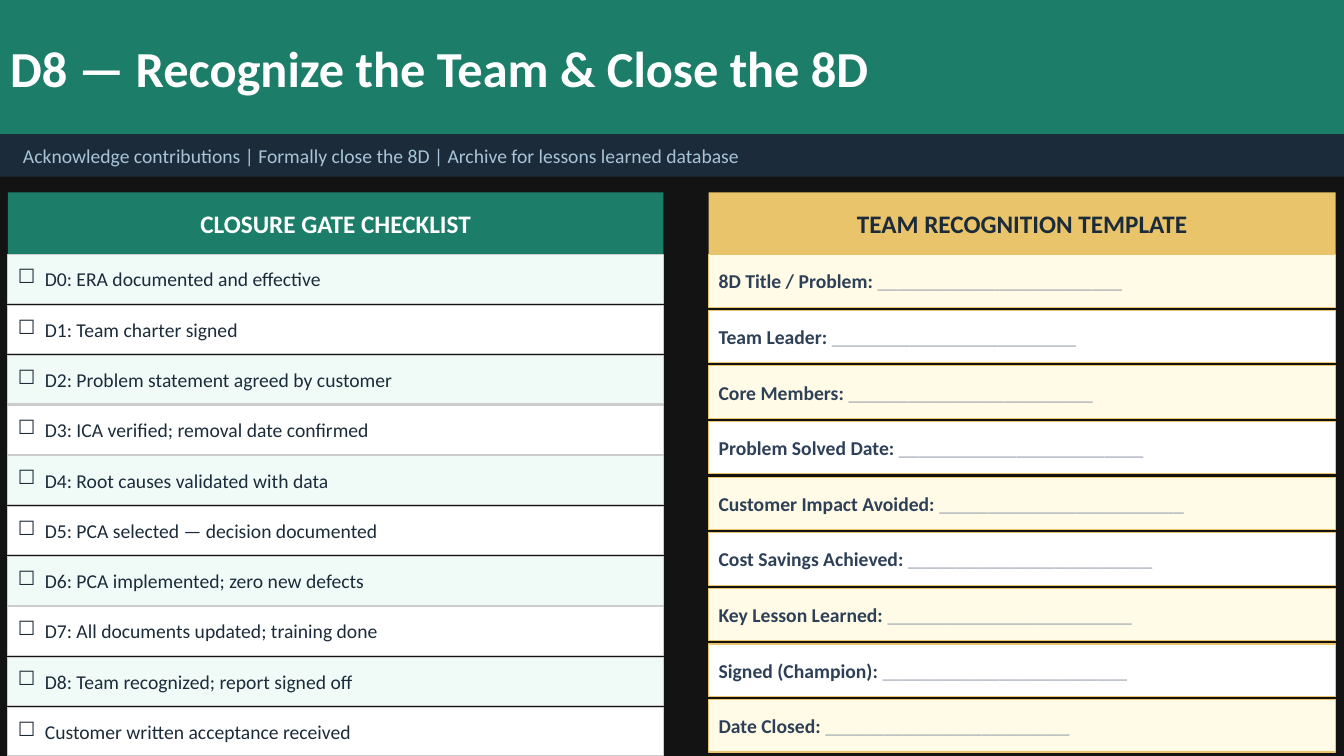
from lxml.etree import SubElement
from pptx import Presentation
from pptx.dml.color import RGBColor
from pptx.enum.shapes import MSO_SHAPE as Shape
from pptx.enum.text import MSO_ANCHOR as Anchor, MSO_AUTO_SIZE as AutoSize, PP_ALIGN as Align
from pptx.oxml.ns import qn
from pptx.util import Cm, Pt

COLORS = {
    "page": "131313", "green": "1C7D68", "navy": "1C2B3A", "mist": "A8C4D8",
    "white": "FFFFFF", "mint": "F0FBF8", "gray": "CCCCCC", "gold": "E9C46A",
    "cream": "FFFBE6", "slate": "2E4057", "blank": "9CA3AF",
}
FONT = "Calibri"
PAGE_WIDTH, PAGE_HEIGHT = 33.87, 19.05
HEADER_HEIGHT = 1.57
BLANK_LINE = "_" * 25

CHECKLIST = [
    "D0: ERA documented and effective",
    "D1: Team charter signed",
    "D2: Problem statement agreed by customer",
    "D3: ICA verified; removal date confirmed",
    "D4: Root causes validated with data",
    "D5: PCA selected — decision documented",
    "D6: PCA implemented; zero new defects",
    "D7: All documents updated; training done",
    "D8: Team recognized; report signed off",
    "Customer written acceptance received",
]
FIELDS = [
    "8D Title / Problem", "Team Leader", "Core Members", "Problem Solved Date",
    "Customer Impact Avoided", "Cost Savings Achieved", "Key Lesson Learned",
    "Signed (Champion)", "Date Closed",
]


def color(name):
    return RGBColor.from_string(COLORS[name])


def style_run(span, size, tint, bold=False):
    span.font.name = FONT
    span.font.size = Pt(size)
    span.font.bold = bold
    span.font.color.rgb = color(tint)


def style_box(shape, fill, line=None):
    shape.fill.solid()
    shape.fill.fore_color.rgb = color(fill)
    if line:
        shape.line.color.rgb = color(line)
        shape.line.width = Pt(0.75)
    else:
        shape.line.fill.background()
    frame = shape.text_frame
    frame.word_wrap = True
    frame.auto_size = AutoSize.NONE
    frame.vertical_anchor = Anchor.MIDDLE


def add_box(page, box, text, fill, size, tint, bold=False, line=None, align=Align.LEFT):
    """Add a filled rectangle with one line of text; box is left, top, width, height in cm."""
    shape = page.shapes.add_shape(Shape.RECTANGLE, *map(Cm, box))
    shape.shadow.inherit = False
    style_box(shape, fill, line)
    shape.text_frame.text = text
    para = shape.text_frame.paragraphs[0]
    para.alignment = align
    style_run(para.runs[0], size, tint, bold)
    return shape


def add_heading(page, box):
    left, top, width, height = box
    title_height = 3.38

    # Title bar
    title = page.shapes.title
    title.left, title.top = Cm(left), Cm(top)
    title.width, title.height = Cm(width), Cm(title_height)
    style_box(title, "green")
    title.text_frame.text = "D8 — Recognize the Team & Close the 8D"
    para = title.text_frame.paragraphs[0]
    para.alignment = Align.LEFT
    style_run(para.runs[0], 36, "white", bold=True)

    # Subtitle strip
    strip = add_box(page, (left, top + title_height, width, height - title_height),
                    "Acknowledge contributions | Formally close the 8D | "
                    "Archive for lessons learned database", "navy", 14, "mist")
    strip.text_frame.margin_left = Cm(0.58)


def row_boxes(box, count, gap):
    """Split the space below the panel header into equal rows."""
    left, top, width, height = box
    pitch = (height - HEADER_HEIGHT + gap) / count
    for index in range(count):
        yield left, top + HEADER_HEIGHT + index * pitch, width, pitch - gap


def add_header(page, box, text, fill, tint):
    left, top, width, _ = box
    add_box(page, (left, top, width, HEADER_HEIGHT), text, fill, 18, tint,
            bold=True, align=Align.CENTER)


def add_checkbox(para):
    properties = para._p.get_or_add_pPr()
    properties.set("marL", str(Cm(0.68)))
    properties.set("indent", str(Cm(-0.68)))
    SubElement(properties, qn("a:buChar")).set("char", "☐")


def add_checklist(page, box):
    add_header(page, box, "CLOSURE GATE CHECKLIST", "green", "white")
    for index, row in enumerate(row_boxes(box, len(CHECKLIST), gap=0.04)):
        fill = "white" if index % 2 else "mint"
        item = add_box(page, row, CHECKLIST[index], fill, 14, "navy", line="gray")
        add_checkbox(item.text_frame.paragraphs[0])


def add_recognition(page, box):
    add_header(page, box, "TEAM RECOGNITION TEMPLATE", "gold", "navy")
    for index, row in enumerate(row_boxes(box, len(FIELDS), gap=0.08)):
        fill = "white" if index % 2 else "cream"
        field = add_box(page, row, f"{FIELDS[index]}: ", fill, 14, "slate",
                        bold=True, line="gold")
        span = field.text_frame.paragraphs[0].add_run()
        span.text = BLANK_LINE
        style_run(span, 14, "blank")


def main():
    deck = Presentation()
    deck.slide_width, deck.slide_height = Cm(PAGE_WIDTH), Cm(PAGE_HEIGHT)
    page = deck.slides.add_slide(deck.slide_layouts[5])
    page.background.fill.solid()
    page.background.fill.fore_color.rgb = color("page")

    add_heading(page, (0, 0, PAGE_WIDTH, 4.45))
    add_checklist(page, (0.2, 4.85, 16.52, 14.2))
    add_recognition(page, (17.86, 4.85, 15.8, 14.1))
    deck.save("out.pptx")


if __name__ == "__main__":
    main()
